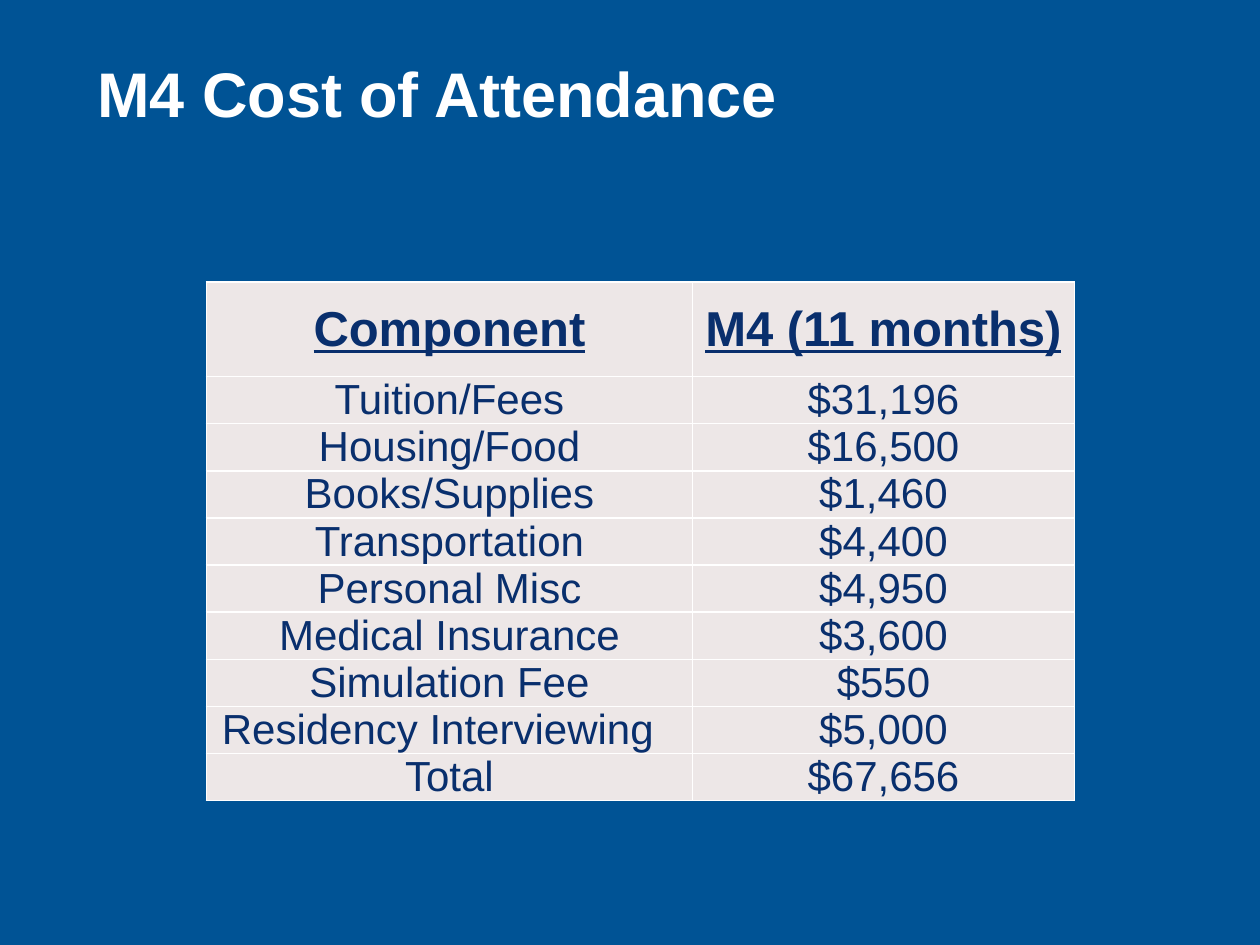
from lxml import etree
from pptx import Presentation
from pptx import util as u
from pptx.dml.color import RGBColor
from pptx.enum import text
from pptx.oxml.ns import qn

COLORS = {"background": "005395", "title": "FFFFFF", "border": "FFFFFF",
          "cell": "EDE7E7", "ink": "092F6D"}
COSTS = [
    ("Component", "M4 (11 months)"),
    ("Tuition/Fees", "$31,196"),
    ("Housing/Food", "$16,500"),
    ("Books/Supplies", "$1,460"),
    ("Transportation", "$4,400"),
    ("Personal Misc", "$4,950"),
    ("Medical Insurance", "$3,600"),
    ("Simulation Fee", "$550"),
    ("Residency Interviewing", "$5,000"),
    ("Total", "$67,656"),
]


def rgb(name):
    """Return the named colour."""
    return RGBColor.from_string(COLORS[name])


def set_font(p, size, color, bold=False, underline=False):
    """Set the font of a whole paragraph."""
    font = p.font
    font.name, font.size = "Arial", u.Pt(size)
    font.bold, font.underline = bold, underline
    font.color.rgb = rgb(color)


def clear_margins(frame):
    """Remove the inner margins of a cell or text frame."""
    for side in ("left", "top", "right", "bottom"):
        setattr(frame, f"margin_{side}", 0)


def add_borders(cell):
    """Draw a thin line on all four sides of a cell."""
    tc_pr = cell._tc.get_or_add_tcPr()
    for side in ("lnL", "lnR", "lnT", "lnB"):
        ln = etree.SubElement(tc_pr, qn(f"a:{side}"), w=str(u.Pt(1)))
        fill = etree.SubElement(ln, qn("a:solidFill"))
        etree.SubElement(fill, qn("a:srgbClr"), val=COLORS["border"])


def place_title(s, left, top, width, height):
    """Place and format the slide title in the given box."""
    sp = s.shapes.title
    sp.left, sp.top, sp.width, sp.height = left, top, width, height
    tf = sp.text_frame
    tf.text = "M4 Cost of Attendance"
    tf.word_wrap = True
    tf.auto_size = text.MSO_AUTO_SIZE.NONE
    tf.vertical_anchor = text.MSO_ANCHOR.TOP
    clear_margins(tf)
    p = tf.paragraphs[0]
    p.alignment = text.PP_ALIGN.LEFT
    p.line_spacing = 0.8
    set_font(p, 36, "title", bold=True)


def fill_cell(cell, value, header):
    """Write and format one table cell."""
    add_borders(cell)
    cell.fill.solid()
    cell.fill.fore_color.rgb = rgb("cell")
    clear_margins(cell)
    cell.vertical_anchor = text.MSO_ANCHOR.MIDDLE
    cell.text = value
    p = cell.text_frame.paragraphs[0]
    p.alignment = text.PP_ALIGN.CENTER
    set_font(p, 28 if header else 24, "ink", bold=header, underline=header)


def place_costs(s, left, top, width, height):
    """Place the cost table in the given box."""
    header_height = u.Cm(1.91)
    row_height = (height - header_height) // (len(COSTS) - 1)
    table = s.shapes.add_table(len(COSTS), 2, left, top, width, height).table
    table.columns[0].width = int(width * 0.56)
    table.columns[1].width = width - table.columns[0].width
    for i, row in enumerate(COSTS):
        table.rows[i].height = row_height if i else header_height
        for j, value in enumerate(row):
            fill_cell(table.cell(i, j), value, header=i == 0)
    table.cell(8, 0).margin_right = u.Cm(0.47)


def main():
    """Build the slide and save it."""
    prs = Presentation()
    prs.slide_width, prs.slide_height = u.Cm(25.4), u.Cm(19.05)
    s = prs.slides.add_slide(prs.slide_layouts[5])
    s.background.fill.solid()
    s.background.fill.fore_color.rgb = rgb("background")
    place_title(s, u.Cm(1.96), u.Cm(1.4), u.Cm(20.29), u.Cm(3.3))
    place_costs(s, u.Cm(4.16), u.Cm(5.68), u.Cm(17.5), u.Cm(10.46))
    prs.save("out.pptx")


if __name__ == "__main__":
    main()
